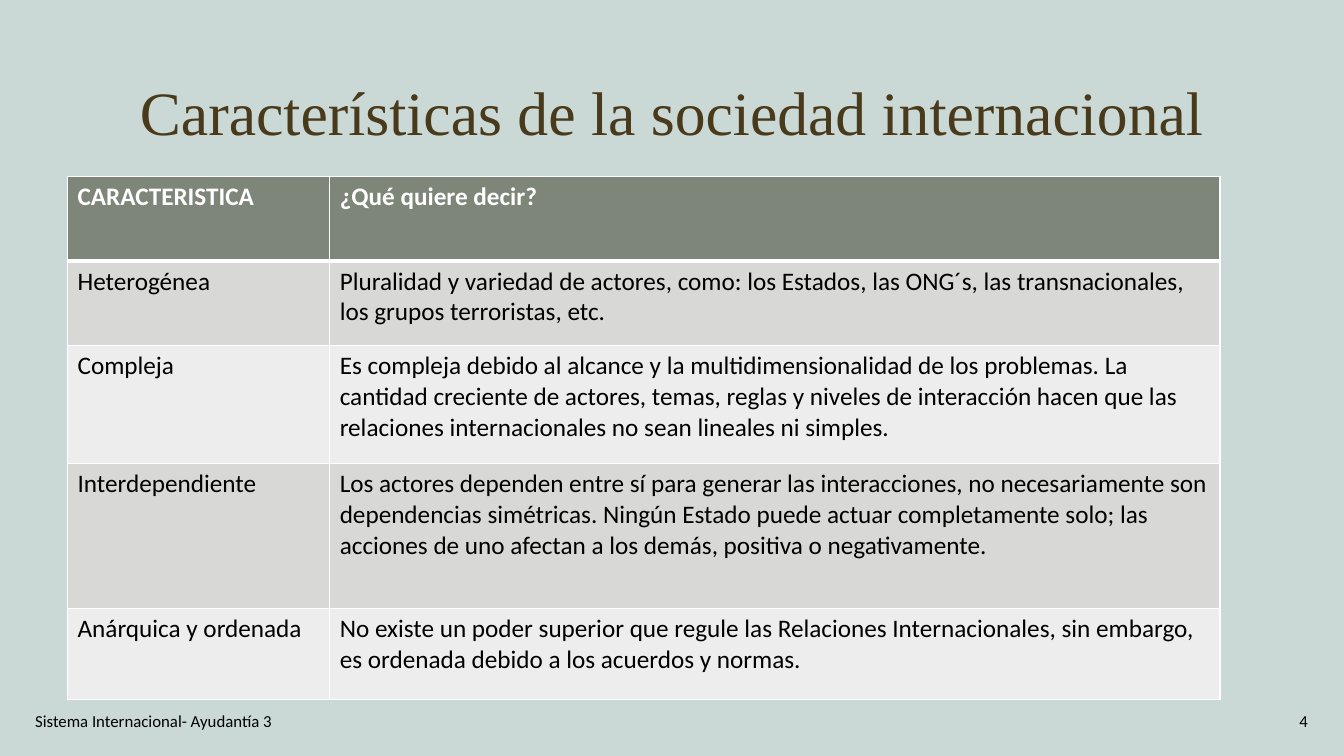
from dataclasses import dataclass

from lxml.etree import SubElement
from pptx import Presentation
from pptx.dml.color import RGBColor
from pptx.enum.text import MSO_ANCHOR, PP_ALIGN
from pptx.oxml.ns import qn
from pptx.util import Emu, Pt

PX_TO_EMU = 9144  # 100 px to the inch


@dataclass(frozen=True)
class Theme:
    background: str = "CAD8D6"
    title: str = "4A3A1C"
    ink: str = "000000"
    white: str = "FFFFFF"
    header_fill: str = "7E8679"
    band_fills: tuple = ("D8D9D7", "ECEDEC")
    title_font: str = "Times New Roman"
    body_font: str = "Calibri"
    title_size: int = 44
    table_size: int = 18
    footer_size: int = 12
    thin_line: int = 1
    thick_line: int = 3


THEME = Theme()

COLUMN_WIDTHS = (260, 883)
ROW_HEIGHTS = (84, 84, 117, 144, 90)
ROWS = (
    ("CARACTERISTICA", "¿Qué quiere decir?"),
    ("Heterogénea",
     "Pluralidad y variedad de actores, como: los Estados, las ONG´s, "
     "las transnacionales, los grupos terroristas, etc."),
    ("Compleja",
     "Es compleja debido al alcance y la multidimensionalidad de los problemas. "
     "La cantidad creciente de actores, temas, reglas y niveles de interacción "
     "hacen que las relaciones internacionales no sean lineales ni simples."),
    ("Interdependiente",
     "Los actores dependen entre sí para generar las interacciones, no "
     "necesariamente son dependencias simétricas. Ningún Estado puede actuar "
     "completamente solo; las acciones de uno afectan a los demás, positiva o "
     "negativamente."),
    ("Anárquica y ordenada",
     "No existe un poder superior que regule las Relaciones Internacionales, "
     "sin embargo, es ordenada debido a los acuerdos y normas."),
)


def px(length):
    return Emu(length * PX_TO_EMU)


def color(value):
    return RGBColor.from_string(value)


def add_span(para, text, font, size, ink, bold=False):
    span = para.add_run()
    span.text = text
    span.font.name = font
    span.font.size = Pt(size)
    span.font.color.rgb = color(ink)
    span.font.bold = bold


def set_title(page, text, left, top, width, height):
    box = page.shapes.title
    box.left, box.top, box.width, box.height = map(px, (left, top, width, height))
    box.text_frame.vertical_anchor = MSO_ANCHOR.MIDDLE
    para = box.text_frame.paragraphs[0]
    para.alignment = PP_ALIGN.CENTER
    para.line_spacing = 0.9
    add_span(para, text, THEME.title_font, THEME.title_size, THEME.title)


def add_footer(page, text, left, width, alignment):
    box = page.shapes.add_textbox(px(left), px(695), px(width), px(40))
    box.text_frame.word_wrap = True
    box.text_frame.vertical_anchor = MSO_ANCHOR.MIDDLE
    para = box.text_frame.paragraphs[0]
    para.alignment = alignment
    add_span(para, text, THEME.body_font, THEME.footer_size, THEME.ink)


def set_borders(cell, top, bottom):
    properties = cell._tc.get_or_add_tcPr()
    widths = {"L": THEME.thin_line, "R": THEME.thin_line, "T": top, "B": bottom}
    for side, width in widths.items():
        line = SubElement(properties, qn(f"a:ln{side}"), w=str(Pt(width)))
        fill = SubElement(line, qn("a:solidFill"))
        SubElement(fill, qn("a:srgbClr"), val=THEME.white)


def fill_cell(cell, text, row):
    is_header = row == 0
    # The thick rule lies between the header and the first data row
    set_borders(cell,
                top=THEME.thick_line if row == 1 else THEME.thin_line,
                bottom=THEME.thick_line if is_header else THEME.thin_line)
    cell.fill.solid()
    band = THEME.band_fills[(row - 1) % 2]
    cell.fill.fore_color.rgb = color(THEME.header_fill if is_header else band)
    add_span(cell.text_frame.paragraphs[0], text, THEME.body_font,
             THEME.table_size, THEME.white if is_header else THEME.ink, is_header)


def add_features_table(page, left, top):
    frame = page.shapes.add_table(len(ROWS), len(COLUMN_WIDTHS), px(left), px(top),
                                  px(sum(COLUMN_WIDTHS)), px(sum(ROW_HEIGHTS)))
    table = frame.table
    for column, width in zip(table.columns, COLUMN_WIDTHS):
        column.width = px(width)
    for row, (texts, height) in enumerate(zip(ROWS, ROW_HEIGHTS)):
        table.rows[row].height = px(height)
        for column, text in enumerate(texts):
            fill_cell(table.cell(row, column), text, row)


def main():
    deck = Presentation()
    deck.slide_width, deck.slide_height = px(1333), px(750)
    page = deck.slides.add_slide(deck.slide_layouts[5])
    page.background.fill.solid()
    page.background.fill.fore_color.rgb = color(THEME.background)

    # Title
    set_title(page, "Características de la sociedad internacional", 92, 42, 1150, 145)

    # Footer and page number
    add_footer(page, "Sistema Internacional- Ayudantía 3", 25, 450, PP_ALIGN.LEFT)
    add_footer(page, "4", 1007, 300, PP_ALIGN.RIGHT)

    # Table of features
    add_features_table(page, 67, 175)

    deck.save("out.pptx")


if __name__ == "__main__":
    main()
